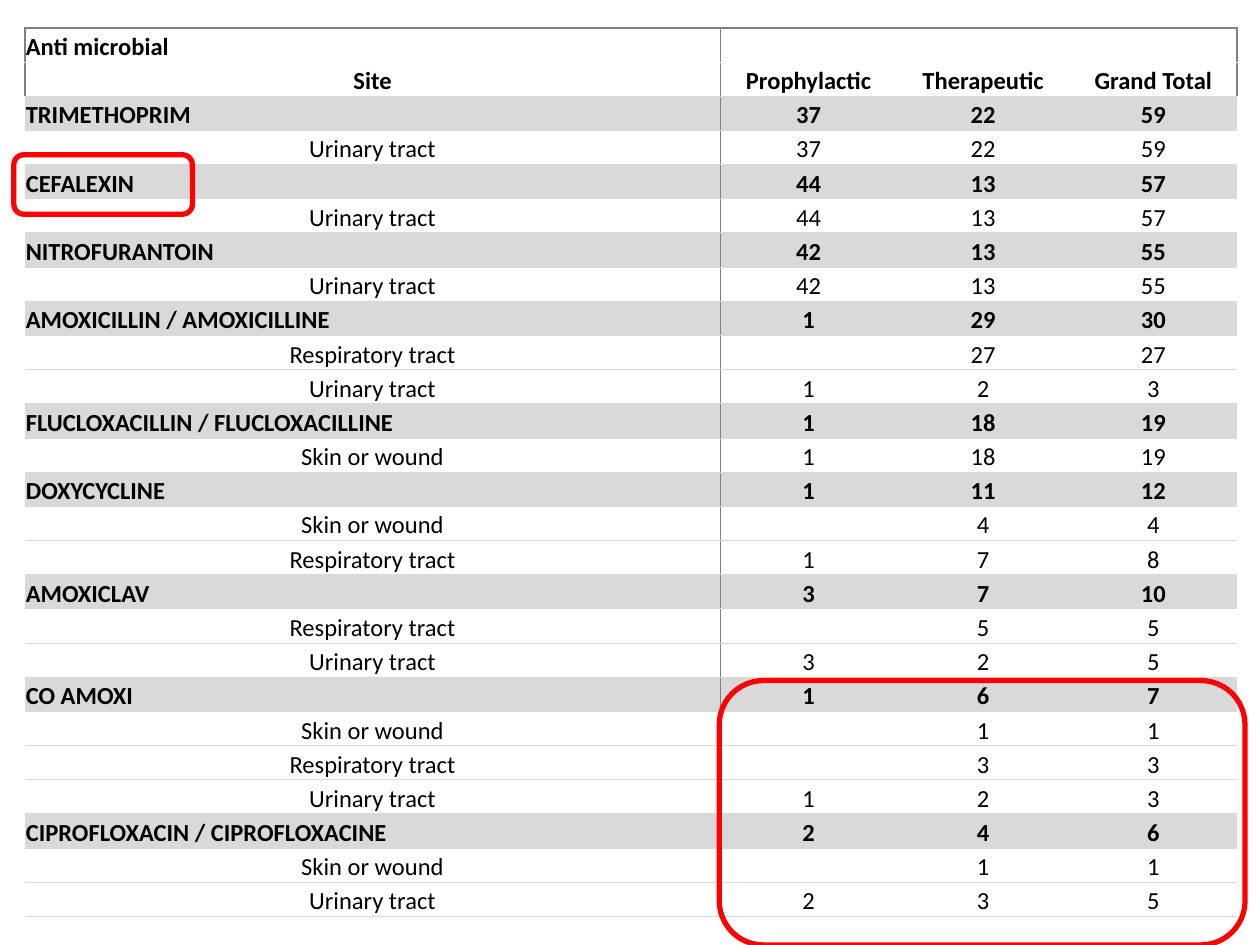
from lxml import etree
from pptx import Presentation
from pptx.dml.color import RGBColor
from pptx.enum.shapes import MSO_SHAPE
from pptx.enum.text import MSO_ANCHOR, PP_ALIGN
from pptx.oxml.ns import qn
from pptx.util import Cm, Pt

ROUNDED = MSO_SHAPE.ROUNDED_RECTANGLE
BOTTOM = MSO_ANCHOR.BOTTOM
LEFT, CENTER = PP_ALIGN.LEFT, PP_ALIGN.CENTER

FONT, FONT_SIZE = "Calibri", Pt(14)
BLACK, WHITE, RED = "000000", "FFFFFF", "FF0000"
GREY, PALE = "808080", "D9D9D9"
THIN, THICK = Pt(0.5), Pt(1)
COLUMN_WIDTHS = [14.02, 3.56, 3.48, 3.38]
ROW_HEIGHT = 0.69

HEADINGS = [
    ("Anti microbial", "", "", ""),
    ("Site", "Prophylactic", "Therapeutic", "Grand Total"),
]
URINARY, RESPIRATORY, SKIN = "Urinary tract", "Respiratory tract", "Skin or wound"
ANTIMICROBIALS = [
    (("TRIMETHOPRIM", 37, 22, 59), [(URINARY, 37, 22, 59)]),
    (("CEFALEXIN", 44, 13, 57), [(URINARY, 44, 13, 57)]),
    (("NITROFURANTOIN", 42, 13, 55), [(URINARY, 42, 13, 55)]),
    (("AMOXICILLIN / AMOXICILLINE", 1, 29, 30),
     [(RESPIRATORY, "", 27, 27), (URINARY, 1, 2, 3)]),
    (("FLUCLOXACILLIN / FLUCLOXACILLINE", 1, 18, 19), [(SKIN, 1, 18, 19)]),
    (("DOXYCYCLINE", 1, 11, 12), [(SKIN, "", 4, 4), (RESPIRATORY, 1, 7, 8)]),
    (("AMOXICLAV", 3, 7, 10), [(RESPIRATORY, "", 5, 5), (URINARY, 3, 2, 5)]),
    (("CO AMOXI", 1, 6, 7),
     [(SKIN, "", 1, 1), (RESPIRATORY, "", 3, 3), (URINARY, 1, 2, 3)]),
    (("CIPROFLOXACIN / CIPROFLOXACINE", 2, 4, 6),
     [(SKIN, "", 1, 1), (URINARY, 2, 3, 5)]),
]


def rgb(hex_colour):
    return RGBColor.from_string(hex_colour)


def set_borders(cell, borders):
    properties = cell._tc.get_or_add_tcPr()
    for side in "LRTB":
        edge = etree.SubElement(properties, qn(f"a:ln{side}"))
        if side in borders:
            colour, width = borders[side]
            edge.set("w", str(int(width)))
            fill = etree.SubElement(edge, qn("a:solidFill"))
            etree.SubElement(fill, qn("a:srgbClr"), val=colour)
        else:
            edge.set("w", "0")
            etree.SubElement(edge, qn("a:noFill"))


def cell_borders(row, column):
    borders = {"T": (PALE, THIN), "B": (PALE, THIN)}
    if row == 0:
        borders.update(T=(GREY, THICK), B=(WHITE, THIN))
    elif row == 1:
        borders["T"] = (WHITE, THIN)
    if column == 0:
        borders["R"] = (GREY, THIN)
    elif column == 1:
        borders["L"] = (GREY, THIN)
    if row < len(HEADINGS):
        if column == 0:
            borders["L"] = (GREY, THICK)
        elif column == len(COLUMN_WIDTHS) - 1:
            borders["R"] = (GREY, THICK)
    return borders


def write_cell(cell, value, alignment, bold):
    cell.vertical_anchor = BOTTOM
    cell.margin_left = cell.margin_right = cell.margin_top = Cm(0.02)
    cell.margin_bottom = 0
    paragraph = cell.text_frame.paragraphs[0]
    paragraph.alignment = alignment
    paragraph.font.name = FONT
    paragraph.font.size = FONT_SIZE
    paragraph.font.bold = bold
    paragraph.font.color.rgb = rgb(BLACK)
    if value == "":
        etree.SubElement(paragraph._p, qn("a:endParaRPr"), sz=str(int(FONT_SIZE.pt * 100)))
    else:
        paragraph.add_run().text = str(value)


def table_rows():
    for heading in HEADINGS:
        yield heading, True, False
    for total, sites in ANTIMICROBIALS:
        yield total, True, True
        for site in sites:
            yield site, False, False


def add_prescription_table(slide):
    rows = list(table_rows())
    table = slide.shapes.add_table(
        len(rows), len(COLUMN_WIDTHS), Cm(0.5), Cm(0.56),
        Cm(sum(COLUMN_WIDTHS)), Cm(ROW_HEIGHT * len(rows))).table
    table.first_row = table.horz_banding = False
    for column, width in zip(table.columns, COLUMN_WIDTHS):
        column.width = Cm(width)
    for r, (values, bold, shaded) in enumerate(rows):
        table.rows[r].height = Cm(ROW_HEIGHT)
        for c, value in enumerate(values):
            cell = table.cell(r, c)
            names_drug = c == 0 and (r == 0 or shaded)
            write_cell(cell, value, LEFT if names_drug else CENTER, bold)
            set_borders(cell, cell_borders(r, c))
            if shaded:
                cell.fill.solid()
                cell.fill.fore_color.rgb = rgb(PALE)
            else:
                cell.fill.background()


def add_highlight(slide, left, top, width, height):
    highlight = slide.shapes.add_shape(ROUNDED, Cm(left), Cm(top), Cm(width), Cm(height))
    highlight.shadow.inherit = False
    highlight.fill.background()
    highlight.line.color.rgb = rgb(RED)
    highlight.line.width = Pt(3)


def main():
    presentation = Presentation()
    presentation.slide_width, presentation.slide_height = Cm(25.4), Cm(19.05)
    slide = presentation.slides.add_slide(presentation.slide_layouts[6])
    add_prescription_table(slide)
    add_highlight(slide, 0.28, 3.12, 3.6, 1.2)
    add_highlight(slide, 14.5, 13.72, 10.6, 5.33)
    presentation.save("out.pptx")


if __name__ == "__main__":
    main()
